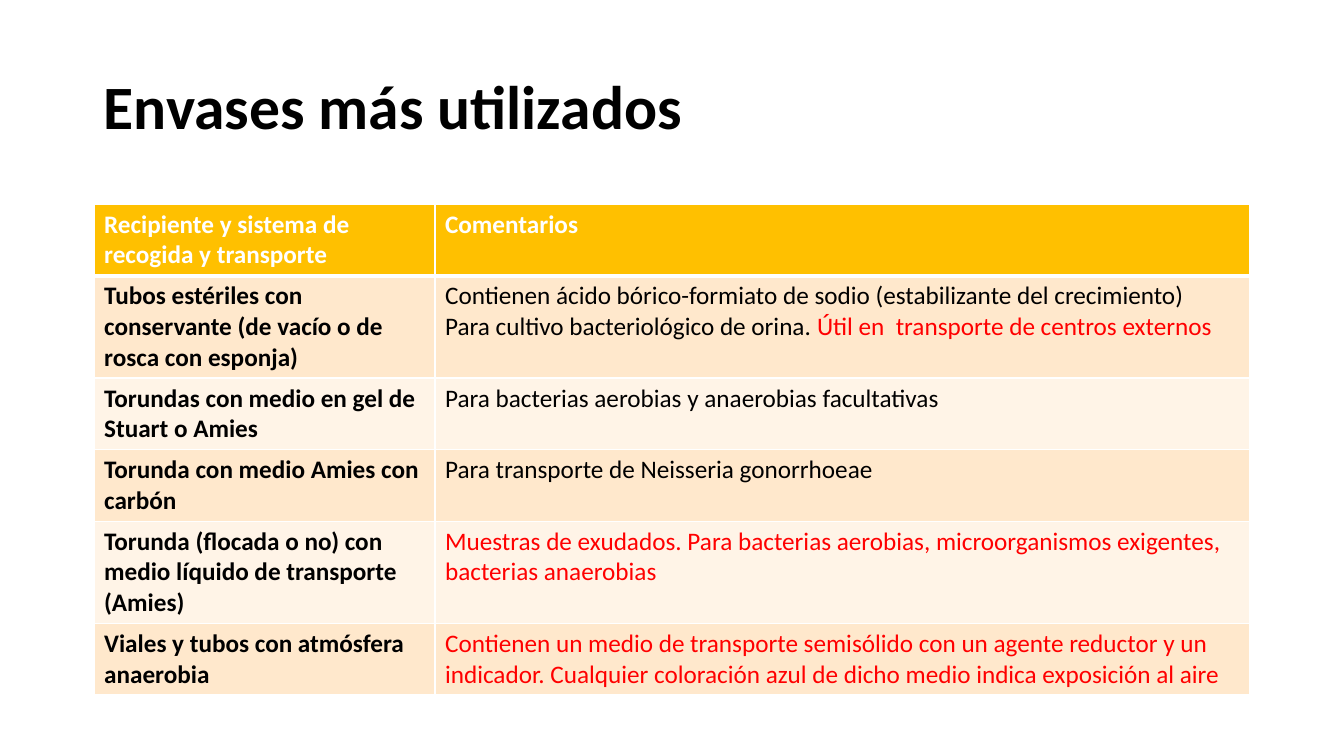
from dataclasses import dataclass

import pptx
import pptx.dml.color
import pptx.enum.text
import pptx.oxml
import pptx.oxml.ns
import pptx.util


@dataclass(frozen=True)
class Theme:
    font: str = "Calibri"
    title_size: int = 44
    body_size: int = 18
    text: str = "000000"
    highlight: str = "FF0000"
    header_text: str = "FFFFFF"
    header_fill: str = "FFC000"
    bands: tuple = ("FFE8CC", "FFF4E7")
    border: str = "FFFFFF"


THEME = Theme()
WIDTH, HEIGHT = 13.33, 7.5
LEFT, CONTENT_WIDTH = 0.07, 0.86  # shares of the slide width
LINE_HEIGHT, CELL_PADDING = 0.305, 0.1  # inches

HEADINGS = ("Recipiente y sistema de recogida y transporte", "Comentarios")
# Each container: name, lines it takes, comment paragraphs as (text, colour) runs.
CONTAINERS = [
    ("Tubos estériles con conservante (de vacío o de rosca con esponja)", 3, [
        [("Contienen ácido bórico-formiato de sodio (estabilizante del crecimiento)", THEME.text)],
        [("Para cultivo bacteriológico de orina. ", THEME.text),
         ("Útil en  transporte de centros externos", THEME.highlight)]]),
    ("Torundas con medio en gel de Stuart o Amies", 2, [
        [("Para bacterias aerobias y anaerobias facultativas", THEME.text)]]),
    ("Torunda con medio Amies con carbón", 2, [
        [("Para transporte de Neisseria gonorrhoeae", THEME.text)]]),
    ("Torunda (flocada o no) con medio líquido de transporte (Amies)", 3, [
        [("Muestras de exudados. Para bacterias aerobias, microorganismos exigentes, "
          "bacterias anaerobias", THEME.highlight)]]),
    ("Viales y tubos con atmósfera anaerobia", 2, [
        [("Contienen un medio de transporte semisólido con un agente reductor y un indicador. "
          "Cualquier coloración azul de dicho medio indica exposición al aire",
          THEME.highlight)]]),
]


def rgb(value):
    return pptx.dml.color.RGBColor.from_string(value)


class SlideBuilder:
    def __init__(self, presentation, theme):
        self.theme = theme
        self.width = presentation.slide_width
        self.height = presentation.slide_height
        self.slide = presentation.slides.add_slide(presentation.slide_layouts[6])

    def box(self, left, top, width, height):
        """Turn shares of the slide's size into lengths."""
        return (int(left * self.width), int(top * self.height),
                int(width * self.width), int(height * self.height))

    def fill_text(self, frame, paragraphs, size, bold):
        for index, runs in enumerate(paragraphs):
            paragraph = frame.paragraphs[0] if index == 0 else frame.add_paragraph()
            paragraph.font.name = self.theme.font
            paragraph.font.size = pptx.util.Pt(size)
            paragraph.font.bold = bold
            for text, colour in runs:
                run = paragraph.add_run()
                run.text = text
                run.font.color.rgb = rgb(colour)

    def title(self, text, left, top, width, height):
        frame = self.slide.shapes.add_textbox(*self.box(left, top, width, height)).text_frame
        frame.word_wrap = True
        frame.vertical_anchor = pptx.enum.text.MSO_ANCHOR.MIDDLE
        self.fill_text(frame, [[(text, self.theme.text)]], self.theme.title_size, True)
        frame.paragraphs[0].line_spacing = 0.9

    def borders(self, cell, top, bottom):
        """Draw the four sides, with top and bottom widths in points."""
        properties = cell._tc.get_or_add_tcPr()
        for index, (side, points) in enumerate(zip("LRTB", (1, 1, top, bottom))):
            properties.insert(index, pptx.oxml.parse_xml(
                f'<a:ln{side} {pptx.oxml.ns.nsdecls("a")} w="{pptx.util.Pt(points)}">'
                f'<a:solidFill><a:srgbClr val="{self.theme.border}"/></a:solidFill>'
                f'</a:ln{side}>'))

    def cell(self, cell, paragraphs, fill, bold, top=1, bottom=1):
        cell.fill.solid()
        cell.fill.fore_color.rgb = rgb(fill)
        self.borders(cell, top, bottom)
        self.fill_text(cell.text_frame, paragraphs, self.theme.body_size, bold)

    def table(self, headings, containers, left, top, width, column_shares):
        line_counts = [2] + [lines for _, lines, _ in containers]
        row_heights = [lines * LINE_HEIGHT + CELL_PADDING for lines in line_counts]
        frame = self.box(left, top, width, sum(row_heights) / HEIGHT)
        grid = self.slide.shapes.add_table(len(row_heights), len(headings), *frame).table
        for column, share in zip(grid.columns, column_shares):
            column.width = int(share * frame[2])
        for row, row_height in zip(grid.rows, row_heights):
            row.height = pptx.util.Inches(row_height)

        for column, heading in enumerate(headings):
            self.cell(grid.cell(0, column), [[(heading, self.theme.header_text)]],
                      self.theme.header_fill, True, bottom=3)
        for row, (name, _, comments) in enumerate(containers, start=1):
            band = self.theme.bands[(row - 1) % 2]
            top_border = 3 if row == 1 else 1
            self.cell(grid.cell(row, 0), [[(name, self.theme.text)]], band, True, top_border)
            self.cell(grid.cell(row, 1), comments, band, False, top_border)


def main():
    presentation = pptx.Presentation()
    presentation.slide_width = pptx.util.Inches(WIDTH)
    presentation.slide_height = pptx.util.Inches(HEIGHT)
    slide = SlideBuilder(presentation, THEME)
    slide.title("Envases más utilizados", LEFT, 0.05, CONTENT_WIDTH, 0.19)
    slide.table(HEADINGS, CONTAINERS, LEFT, 0.27, CONTENT_WIDTH, (0.295, 0.705))
    presentation.save("out.pptx")


if __name__ == "__main__":
    main()
